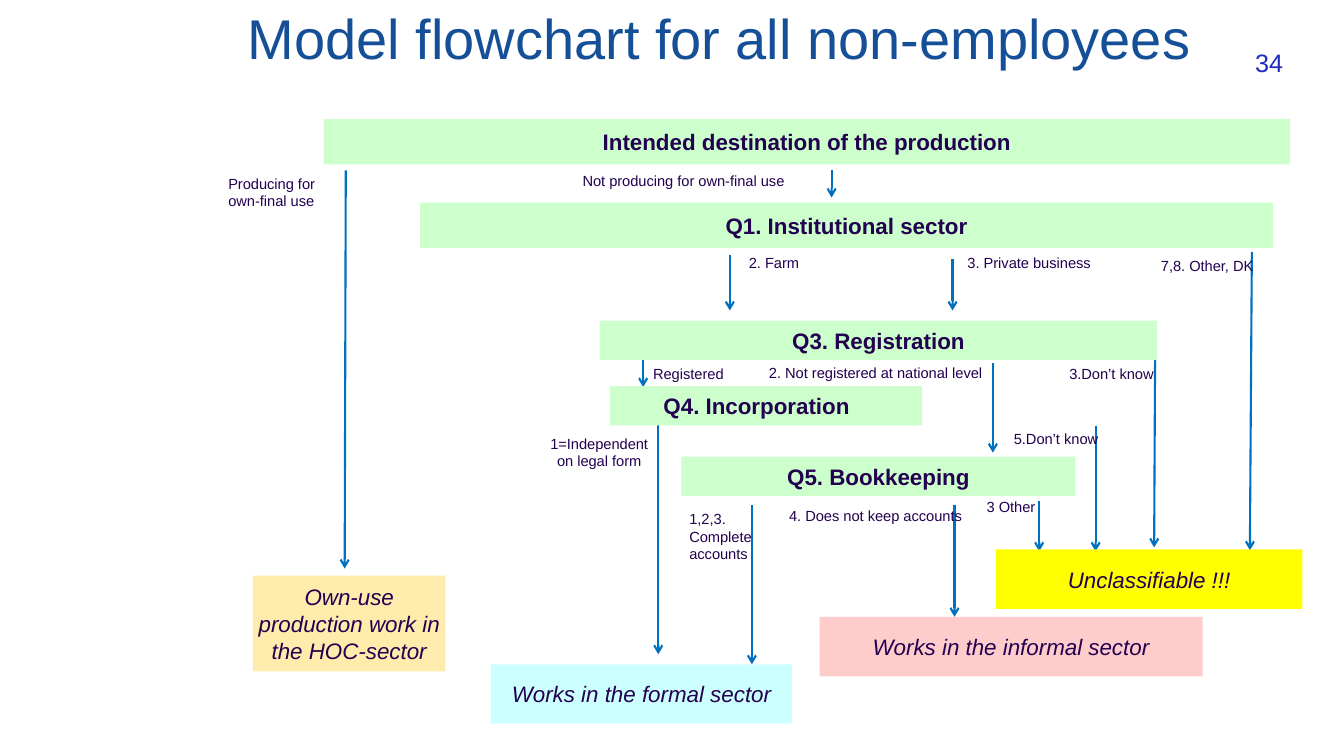
from dataclasses import dataclass

from lxml import etree
from pptx import Presentation
from pptx.dml.color import RGBColor
from pptx.enum import shapes, text
from pptx.oxml import ns
from pptx.util import Pt


@dataclass(frozen=True)
class Theme:
    font: str = "Arial"
    ink: str = "230050"
    title: str = "154F98"
    number: str = "1E2DBE"
    arrow: str = "0070C0"
    step: str = "CCFFCC"
    own_use: str = "FFEBAB"
    formal: str = "CCFFFF"
    informal: str = "FFCCCC"
    unclassifiable: str = "FFFF00"
    title_size: float = 40
    number_size: float = 18
    box_size: float = 16
    label_size: float = 10.5
    arrow_width: float = 1.5


@dataclass(frozen=True)
class Box:
    left: float
    top: float
    width: float
    height: float

    def inner(self, left, top, width, height):
        return Box(self.left + left, self.top + top, width, height)

    def lengths(self):
        return Pt(self.left), Pt(self.top), Pt(self.width), Pt(self.height)


THEME = Theme()
LEFT, CENTER, RIGHT = text.PP_ALIGN.LEFT, text.PP_ALIGN.CENTER, text.PP_ALIGN.RIGHT


def set_margins(frame, horizontal, vertical):
    frame.margin_left = frame.margin_right = Pt(horizontal)
    frame.margin_top = frame.margin_bottom = Pt(vertical)


def write(frame, words, size, color, align=LEFT, bold=False, italic=False):
    frame.text = words
    para = frame.paragraphs[0]
    para.alignment = align
    for span in para.runs:
        span.font.name = THEME.font
        span.font.size = Pt(size)
        span.font.bold = bold
        span.font.italic = italic
        span.font.color.rgb = RGBColor.from_string(color)


def add_text(page, box, words, size, color, align=LEFT, wrap=True):
    frame = page.shapes.add_textbox(*box.lengths()).text_frame
    frame.word_wrap = wrap
    write(frame, words, size, color, align)
    return frame


def add_block(page, box, words, fill, bold=False, italic=False):
    block = page.shapes.add_shape(shapes.MSO_SHAPE.RECTANGLE, *box.lengths())
    block.shadow.inherit = False
    block.fill.solid()
    block.fill.fore_color.rgb = RGBColor.from_string(fill)
    block.line.fill.background()
    frame = block.text_frame
    frame.word_wrap = True
    frame.vertical_anchor = text.MSO_ANCHOR.MIDDLE
    set_margins(frame, 1.5, 0.75)
    write(frame, words, THEME.box_size, THEME.ink, CENTER, bold, italic)
    return frame


def draw_heading(page, box):
    add_text(page, box.inner(0, 0, 715, 73.4), "Model flowchart for all non-employees",
             THEME.title_size, THEME.title, CENTER)
    number = add_text(page, box.inner(718, 34.5, 42.5, 22.3), "34",
                      THEME.number_size, THEME.number, RIGHT)
    set_margins(number, 0, 0)


def draw_arrows(page, box):
    arrows = [
        (91, 36.7, 90.2, 321.1),
        (438, 36.7, 438, 56.1),
        (365.3, 97.2, 365.3, 136.8),
        (524.4, 100, 524.4, 136.8),
        (738.2, 95, 736.8, 308),
        (303.4, 172, 303.4, 191.5),
        (553.2, 174.2, 553.2, 238.3),
        (669.1, 168.4, 668.4, 306),
        (314.2, 212.4, 314.2, 382.3),
        (626.6, 219.6, 626.6, 308.8),
        (381.1, 275.7, 381.1, 389.5),
        (525.8, 275.7, 525.8, 355.6),
        (586.3, 272.8, 586.3, 308.8),
    ]
    for x1, y1, x2, y2 in arrows:
        arrow = page.shapes.add_connector(
            shapes.MSO_CONNECTOR.STRAIGHT,
            Pt(box.left + x1), Pt(box.top + y1), Pt(box.left + x2), Pt(box.top + y2))
        arrow.line.width = Pt(THEME.arrow_width)
        arrow.line.color.rgb = RGBColor.from_string(THEME.arrow)
        properties = arrow.element.spPr
        line = properties.find(ns.qn("a:ln"))
        etree.SubElement(line, ns.qn("a:tailEnd"), type="arrow")
        etree.SubElement(properties, ns.qn("a:effectLst"))


def draw_steps(page, box):
    steps = [
        ("Intended destination of the production", 75.1, 0, 690.5, 32.4, 1.5),
        ("Q1. Institutional sector", 144.2, 59.7, 609.1, 32.4, 1.5),
        ("Q3. Registration", 272.4, 144, 398.2, 28.1, 1.5),
        ("Q4. Incorporation", 279.6, 190.8, 223.2, 28.1, 15),
        ("Q5. Bookkeeping", 330.7, 241.2, 281.5, 28.1, 1.5),
    ]
    for words, left, top, width, height, margin_right in steps:
        frame = add_block(page, box.inner(left, top, width, height), words,
                          THEME.step, bold=True)
        frame.margin_right = Pt(margin_right)


def draw_outcomes(page, box):
    outcomes = [
        ("Own-use production work in the HOC-sector", THEME.own_use, 24.7, 326.1, 137.5, 68.4),
        ("Works in the formal sector", THEME.formal, 194.6, 389.5, 215.3, 42.5),
        ("Works in the informal sector", THEME.informal, 429.4, 355.6, 273.6, 42.5),
        ("Unclassifiable !!!", THEME.unclassifiable, 555.4, 307.4, 218.9, 42.5),
    ]
    for words, fill, *place in outcomes:
        add_block(page, box.inner(*place), words, fill, italic=True)


def draw_labels(page, box):
    labels = [
        ("Producing for own-final use", 0, 36, 79.2, 32.4, True, LEFT),
        ("Not producing for own-final use", 253, 34.5, 176.4, 20.2, True, LEFT),
        ("2. Farm", 371.8, 92.8, 54.7, 20.2, True, LEFT),
        ("3. Private business", 528, 92.8, 136.8, 20.2, True, LEFT),
        ("7,8. Other, DK", 666.2, 95, 82.1, 20.2, False, LEFT),
        ("Registered", 303.4, 172, 66.2, 20.2, False, LEFT),
        ("2. Not registered at national level", 386.2, 171.3, 169.9, 20.2, False, LEFT),
        ("3.Don’t know", 600.7, 172, 76.3, 20.2, False, LEFT),
        ("1=Independent on legal form", 228.5, 221.7, 87.1, 32.4, True, CENTER),
        ("5.Don’t know", 561.1, 218.8, 76.3, 20.2, False, LEFT),
        ("1,2,3. Complete accounts", 329.3, 275.7, 64.1, 45.4, True, LEFT),
        ("4. Does not keep accounts", 400.6, 273.6, 175.7, 20.2, True, LEFT),
        ("3 Other", 541.7, 267.1, 49.7, 20.2, False, LEFT),
    ]
    for words, left, top, width, height, wrap, align in labels:
        frame = add_text(page, box.inner(left, top, width, height), words,
                         THEME.label_size, THEME.ink, align, wrap)
        frame.auto_size = text.MSO_AUTO_SIZE.SHAPE_TO_FIT_TEXT


def main():
    deck = Presentation()
    deck.slide_width, deck.slide_height = Pt(960), Pt(540)
    page = deck.slides.add_slide(deck.slide_layouts[6])
    draw_heading(page, Box(156, -0.7, 765, 73.4))
    flow = Box(156, 85, 775, 432)
    for draw in (draw_arrows, draw_steps, draw_outcomes, draw_labels):
        draw(page, flow)
    deck.save("out.pptx")


if __name__ == "__main__":
    main()
